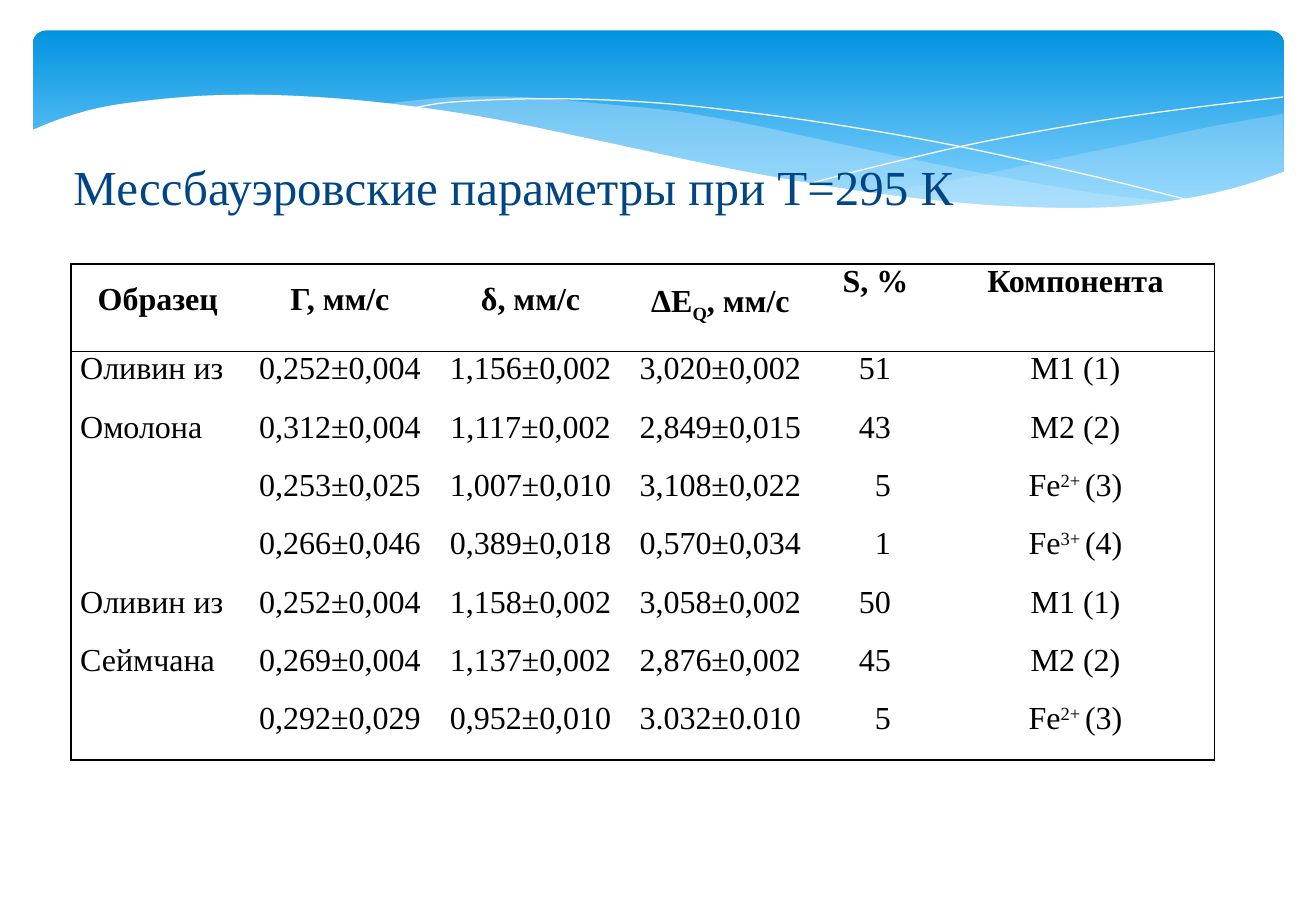
from dataclasses import dataclass

from lxml.etree import SubElement
from pptx import Presentation
from pptx.dml.color import RGBColor
from pptx.enum.shapes import MSO_SHAPE
from pptx.enum.text import MSO_ANCHOR, PP_ALIGN
from pptx.oxml.ns import qn
from pptx.util import Pt


@dataclass(frozen=True)
class Theme:
    font: str = "Times New Roman"
    title_size: float = 29
    table_size: float = 19
    title: str = "004586"
    ink: str = "000000"
    paper: str = "FFFFFF"
    wave: str = "C6E7FC"
    sky: tuple = ("0293E0", "83D3FE")


def rgb(value):
    return RGBColor.from_string(value)


def smooth(knots, steps=6):
    padded = [knots[0], *knots, knots[-1]]
    points = [knots[0]]
    for a, b, c, d in zip(padded, padded[1:], padded[2:], padded[3:]):
        for i in range(1, steps + 1):
            t = i / steps
            points.append(tuple(
                (2 * q + (r - p) * t + (2 * p - 5 * q + 4 * r - s) * t ** 2
                 + (3 * q - p - 3 * r + s) * t ** 3) / 2
                for p, q, r, s in zip(a, b, c, d)))
    return points


class Deck:
    def __init__(self, theme, width, height):
        self.theme = theme
        self.prs = Presentation()
        self.prs.slide_width, self.prs.slide_height = Pt(width), Pt(height)
        self.s = self.prs.slides.add_slide(self.prs.slide_layouts[6])

    def style(self, p, size, color, bold=False):
        for r in p.runs:
            r.font.name = self.theme.font
            r.font.size = Pt(size)
            r.font.bold = bold
            r.font.color.rgb = rgb(color)

    def banner(self, x, y, w, h, radius):
        sp = self.s.shapes.add_shape(
            MSO_SHAPE.ROUNDED_RECTANGLE, Pt(x), Pt(y), Pt(w), Pt(h))
        sp.adjustments[0] = radius
        sp.shadow.inherit = False
        sp.line.fill.background()
        sp.fill.gradient()
        sp.fill.gradient_angle = 270
        for stop, color, position in zip(
                sp.fill.gradient_stops, self.theme.sky, (0, 0.9)):
            stop.color.rgb = rgb(color)
            stop.position = position

    def outline(self, points, close):
        emu = [(Pt(x), Pt(y)) for x, y in points]
        builder = self.s.shapes.build_freeform(*emu[0])
        builder.add_line_segments(emu[1:], close=close)
        sp = builder.convert_to_shape()
        sp.shadow.inherit = False
        return sp

    def area(self, points, color, opacity=100):
        sp = self.outline(points, True)
        sp.line.fill.background()
        sp.fill.solid()
        sp.fill.fore_color.rgb = rgb(color)
        if opacity < 100:
            clr = sp.fill._xPr.find(qn("a:solidFill"))[0]
            SubElement(clr, qn("a:alpha"), val=str(opacity * 1000))

    def curve(self, points):
        sp = self.outline(points, False)
        sp.fill.background()
        sp.line.color.rgb = rgb(self.theme.paper)
        sp.line.width = Pt(0)

    def title(self, text, x, y, w, h):
        tf = self.s.shapes.add_textbox(Pt(x), Pt(y), Pt(w), Pt(h)).text_frame
        tf.word_wrap = True
        tf.vertical_anchor = MSO_ANCHOR.MIDDLE
        tf.margin_left = tf.margin_right = tf.margin_bottom = 0
        tf.margin_top = Pt(1.5)
        tf.text = text
        p = tf.paragraphs[0]
        p.line_spacing = 0.95
        self.style(p, self.theme.title_size, self.theme.title)

    def border(self, cell, visible):
        tcPr = cell._tc.get_or_add_tcPr()
        for side in "LRTB":
            ln = SubElement(tcPr, qn("a:ln" + side), w=str(Pt(1)))
            if side in visible:
                fill = SubElement(ln, qn("a:solidFill"))
                SubElement(fill, qn("a:srgbClr"), val=self.theme.ink)
            else:
                SubElement(ln, qn("a:noFill"))

    def cell(self, cell, content, align, bold, baseline):
        cell.margin_left = cell.margin_right = Pt(5.5)
        cell.margin_top = cell.margin_bottom = 0
        p = cell.text_frame.paragraphs[0]
        p.alignment = align
        if isinstance(content, tuple):
            for text in content:
                p.add_run().text = text
            p.runs[1].font._element.set("baseline", str(baseline * 1000))
        elif content:
            p.text = content
        self.style(p, self.theme.table_size, self.theme.ink, bold)

    def table(self, rows, x, y, widths, heights):
        tbl = self.s.shapes.add_table(
            len(rows), len(widths), Pt(x), Pt(y),
            Pt(sum(widths)), Pt(sum(heights))).table
        tbl.first_row = tbl.horz_banding = False
        for column, width in zip(tbl.columns, widths):
            column.width = Pt(width)
        for row, height in zip(tbl.rows, heights):
            row.height = Pt(height)
        last_row, last_col = len(rows) - 1, len(widths) - 1
        for i, row in enumerate(rows):
            header = i == 0
            for j, content in enumerate(row):
                cell = tbl.cell(i, j)
                align = PP_ALIGN.CENTER
                if not header and j == 0:
                    align = PP_ALIGN.LEFT
                if not header and j == SHARE:
                    align = PP_ALIGN.RIGHT
                self.cell(cell, content, align, header, -25 if header else 30)
                if align == PP_ALIGN.RIGHT:
                    cell.margin_right = Pt(27)
                if header and j < SHARE:
                    p = cell.text_frame.paragraphs[0]
                    p.line_spacing = 1.5
                    p.space_after = Pt(6.2)
                sides = {"L": j == 0, "R": j == last_col,
                         "T": i <= 1, "B": i in (0, last_row)}
                self.border(cell, [k for k, shown in sides.items() if shown])
                cell.fill.background()


SHARE = 4
RIGHT_WAVE = [
    [(760.5, 67.5), (718, 75), (671, 85), (608, 98), (569, 106), (516, 115)],
    [(516, 115), (571, 121), (626, 124), (681, 122), (729, 112), (761, 102)],
]
MIDDLE_WAVE = [
    [(696, 120), (653, 115), (605, 107), (551, 96.5), (490, 83.5),
     (443.5, 73.5), (401, 66), (362, 62), (312, 57.6), (268.5, 57.6), (223, 62)],
    [(223, 62), (267, 67.5), (315, 76), (382, 90.5), (442, 103), (495, 112),
     (542, 119), (593, 123), (638, 124.5), (669, 123), (696, 120)],
]
FALLING_LINE = [(241, 65), (268, 60.5), (325, 58.5), (382, 60.5), (434, 65.5),
                (496, 74), (567, 86.5), (648, 104.5), (708, 119.5)]
RISING_LINE = [(479, 109), (524, 97.5), (583, 84), (652.5, 71.5),
               (710, 63.5), (760.5, 57.5)]
WHITE_EDGE = [(762, 101.5), (733, 111), (701, 118), (663, 122.5), (619, 123),
              (567, 120), (505, 112.5), (433, 100), (348.5, 82), (284.5, 69),
              (228, 61), (179, 57), (137.5, 56.2), (103, 58), (66, 62.5),
              (40, 69), (18, 77.5)]
ROWS = [
    ("Образец", "Γ, мм/с", "δ, мм/с", ("ΔE", "Q", ", мм/с"), "S, %", "Компонента"),
    ("Оливин из", "0,252±0,004", "1,156±0,002", "3,020±0,002", "51", "М1 (1)"),
    ("Омолона", "0,312±0,004", "1,117±0,002", "2,849±0,015", "43", "М2 (2)"),
    ("", "0,253±0,025", "1,007±0,010", "3,108±0,022", "5", ("Fe", "2+ ", "(3)")),
    ("", "0,266±0,046", "0,389±0,018", "0,570±0,034", "1", ("Fe", "3+ ", "(4)")),
    ("Оливин из", "0,252±0,004", "1,158±0,002", "3,058±0,002", "50", "М1 (1)"),
    ("Сеймчана", "0,269±0,004", "1,137±0,002", "2,876±0,002", "45", "М2 (2)"),
    ("", "0,292±0,029", "0,952±0,010", "3.032±0.010", "5", ("Fe", "2+ ", "(3)")),
]


def main():
    theme = Theme()
    deck = Deck(theme, 780, 540)
    deck.banner(19.5, 18, 741.5, 112, 0.071)
    for wave, opacity in ((RIGHT_WAVE, 29), (MIDDLE_WAVE, 40)):
        deck.area([pt for edge in wave for pt in smooth(edge)], theme.wave, opacity)
    for line in (FALLING_LINE, RISING_LINE):
        deck.curve(smooth(line))
    deck.area(smooth(WHITE_EDGE) + [(18, 161), (762, 161)], theme.paper)
    deck.title("Мессбауэровские параметры при Т=295 К", 43.5, 66, 666, 90)
    deck.table(ROWS, 42, 156.5, (103, 113, 113, 112, 72, 165), [51.8] + [34.6] * 7)
    deck.prs.save("out.pptx")


if __name__ == "__main__":
    main()
